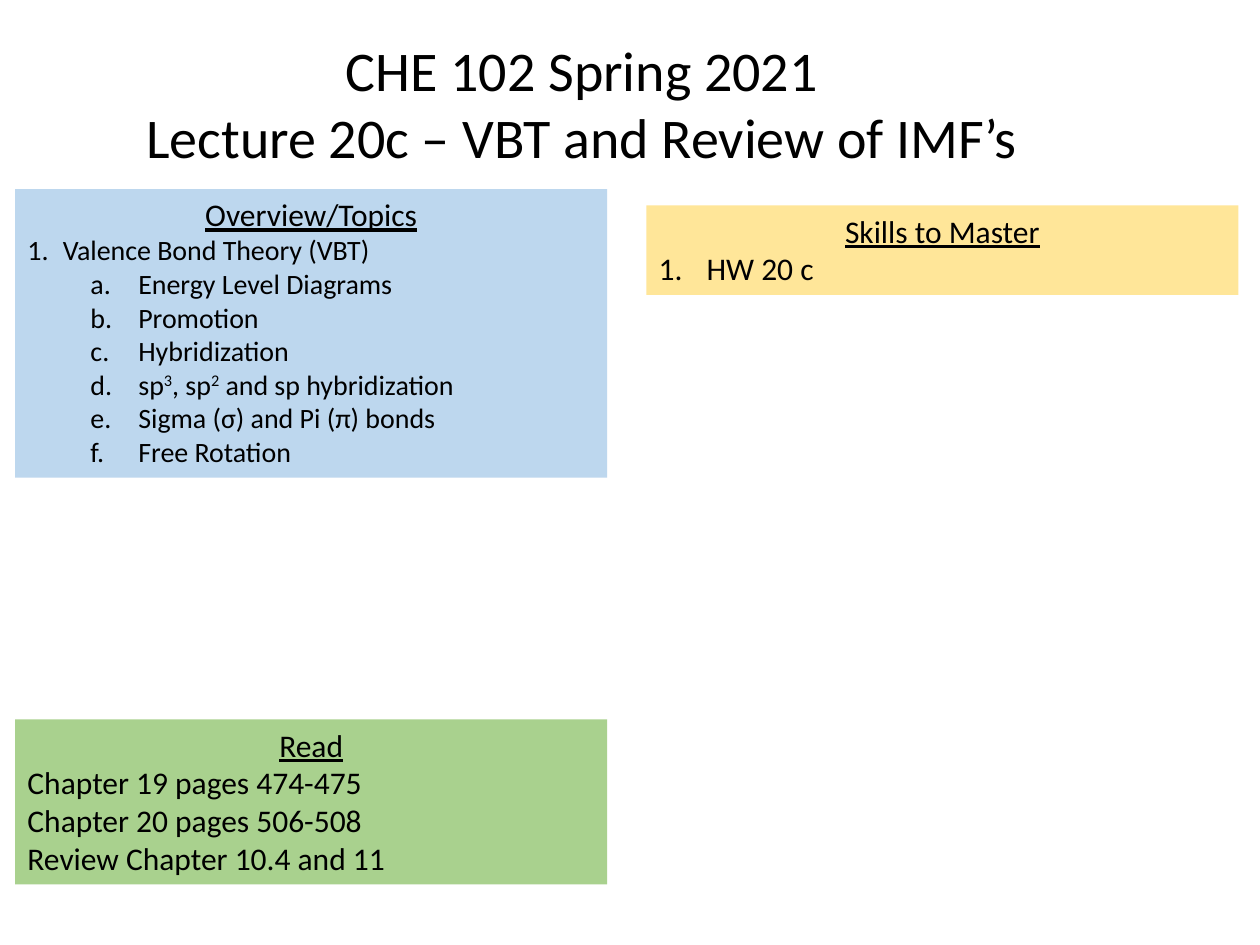
from dataclasses import dataclass

from lxml import etree
from pptx import Presentation
from pptx import util as u
from pptx.dml.color import RGBColor
from pptx.enum import shapes, text
from pptx.oxml.ns import qn

COLORS = {
    "text": "000000",
    "topics": "BDD7EE",
    "skills": "FFE699",
    "read": "A9D18E",
}
FONT = "Calibri"


@dataclass(frozen=True)
class Run:
    text: str
    superscript: bool = False


@dataclass(frozen=True)
class Line:
    runs: tuple[Run, ...]
    size: int = 18
    centered: bool = False
    underline: bool = False
    numbering: str = ""
    margin: float = 0
    hanging: float = 0
    level: int = 0


@dataclass(frozen=True)
class Panel:
    color: str
    left: float
    top: float
    height: float
    lines: tuple[Line, ...]
    width: float = 4.7


def heading(label: str) -> Line:
    return Line((Run(label),), centered=True, underline=True)


def subtopic(*runs: Run) -> Line:
    return Line(runs, 16, numbering="alphaLcPeriod", margin=0.88, hanging=0.38, level=1)


TITLE = tuple(
    Line((Run(label),), size=32, centered=True)
    for label in ("CHE 102 Spring 2021", "Lecture 20c – VBT and Review of IMF’s")
)

PANELS = (
    Panel("topics", 0.12, 1.5, 2.29, (
        heading("Overview/Topics"),
        Line((Run("Valence Bond Theory (VBT)"),), 16,
             numbering="arabicPeriod", margin=0.28, hanging=0.28),
        subtopic(Run("Energy Level Diagrams")),
        subtopic(Run("Promotion")),
        subtopic(Run("Hybridization")),
        subtopic(Run("sp"), Run("3", True), Run(", sp"), Run("2", True),
                 Run(" and sp hybridization")),
        subtopic(Run("Sigma (σ) and Pi (π) bonds")),
        subtopic(Run("Free Rotation")),
    )),
    Panel("skills", 5.13, 1.63, 0.71, (
        heading("Skills to Master"),
        Line((Run("HW 20 c"),), numbering="arabicPeriod", margin=0.38, hanging=0.38),
    )),
    Panel("read", 0.12, 5.71, 1.31, (
        heading("Read"),
        Line((Run("Chapter 19 pages 474-475"),)),
        Line((Run("Chapter 20 pages 506-508"),)),
        Line((Run("Review Chapter 10.4 and 11"),)),
    )),
)


def number_paragraph(p, line: Line) -> None:
    p_pr = p._p.get_or_add_pPr()
    p_pr.set("marL", str(u.Inches(line.margin)))
    p_pr.set("indent", str(-u.Inches(line.hanging)))
    bullet_font = etree.SubElement(p_pr, qn("a:buFont"))
    bullet_font.set("typeface", "+mj-lt")
    bullet = etree.SubElement(p_pr, qn("a:buAutoNum"))
    bullet.set("type", line.numbering)


def write_lines(tf, lines: tuple[Line, ...]) -> None:
    tf.auto_size = text.MSO_AUTO_SIZE.SHAPE_TO_FIT_TEXT
    for i, line in enumerate(lines):
        p = tf.add_paragraph() if i else tf.paragraphs[0]
        p.alignment = text.PP_ALIGN.CENTER if line.centered else text.PP_ALIGN.LEFT
        p.level = line.level
        if line.numbering:
            number_paragraph(p, line)
        for run in line.runs:
            r = p.add_run()
            r.text = run.text
            r.font.name = FONT
            r.font.size = u.Pt(line.size)
            r.font.underline = line.underline
            r.font.color.rgb = RGBColor.from_string(COLORS["text"])
            if run.superscript:
                r.font._element.set("baseline", "30000")


def draw_panel(s, panel: Panel) -> None:
    sp = s.shapes.add_shape(
        shapes.MSO_SHAPE.RECTANGLE, u.Inches(panel.left), u.Inches(panel.top),
        u.Inches(panel.width), u.Inches(panel.height))
    sp.shadow.inherit = False
    sp.fill.solid()
    sp.fill.fore_color.rgb = RGBColor.from_string(COLORS[panel.color])
    sp.line.fill.background()
    tf = sp.text_frame
    tf.word_wrap = True
    tf.vertical_anchor = text.MSO_ANCHOR.TOP
    write_lines(tf, panel.lines)


def draw_title(s) -> None:
    sp = s.shapes.add_textbox(u.Inches(1.03), u.Inches(0.23), u.Inches(7.18), u.Inches(1.18))
    tf = sp.text_frame
    tf.word_wrap = False
    write_lines(tf, TITLE)


def main() -> None:
    prs = Presentation()
    prs.slide_width, prs.slide_height = u.Inches(10), u.Inches(7.5)
    s = prs.slides.add_slide(prs.slide_layouts[6])
    for panel in PANELS:
        draw_panel(s, panel)
    draw_title(s)
    prs.save("out.pptx")


if __name__ == "__main__":
    main()
